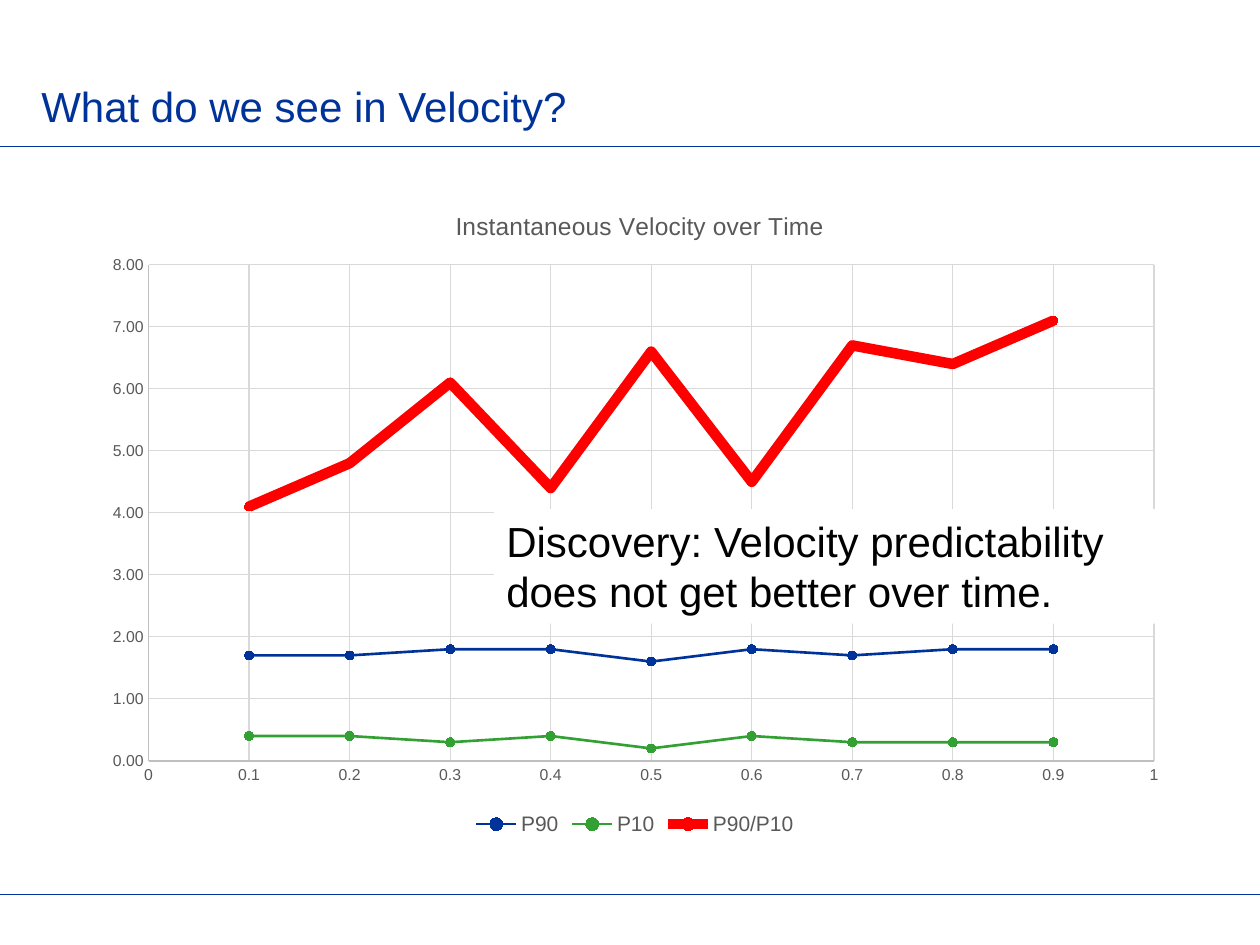
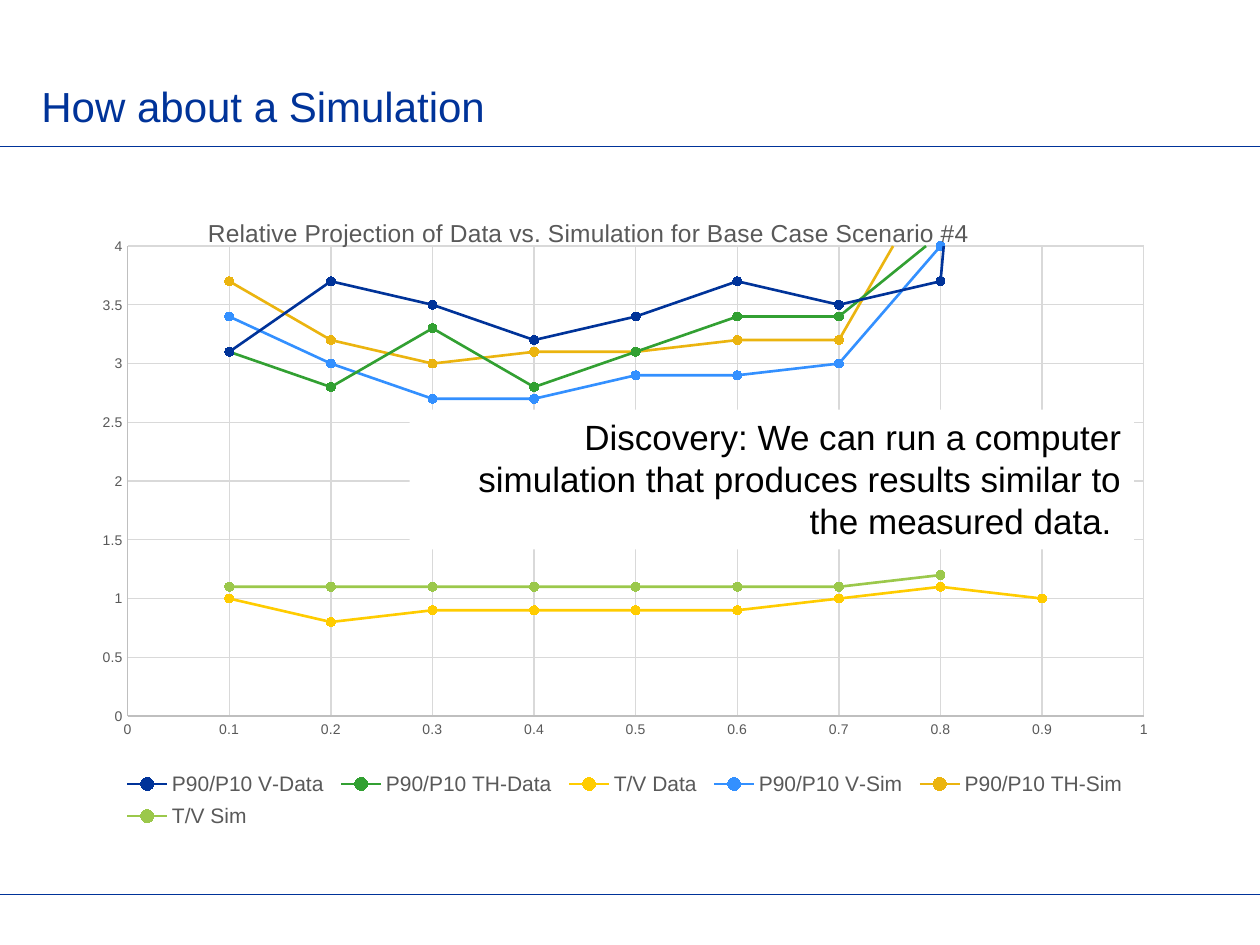
from lxml import etree
from pptx import Presentation
from pptx.chart.data import XyChartData
from pptx.dml.color import RGBColor
from pptx.enum import chart as ch, shapes, text as tx
from pptx.oxml.ns import qn
from pptx.util import Inches, Pt

HUES = {
    "navy": "003399", "green": "32A032", "gold": "FFCC00", "blue": "3390FF",
    "amber": "EBB40F", "lime": "9BC84B", "red": "FF0000", "black": "000000",
    "white": "FFFFFF", "gray": "595959", "axis": "BFBFBF", "grid": "D9D9D9",
}
RGB = {name: RGBColor.from_string(code) for name, code in HUES.items()}
FONT = "Arial"
TIMES = [n / 10 for n in range(1, 10)]

SLIDES = [
    {
        "title": "What do we see in Velocity?",
        "box": (0.75, 1.42, 8.58, 5.25),
        "head": "Instantaneous Velocity over Time",
        "head_at": (0.33, 0.04),
        "plot": (0.05, 0.13, 0.93, 0.75),
        "key": None,
        "top": 8, "step": 1, "form": "0.00", "size": 9,
        "rows": [
            ("P90", "navy", 1.5, [1.7, 1.7, 1.8, 1.8, 1.6, 1.8, 1.7, 1.8, 1.8]),
            ("P10", "green", 1.5, [0.4, 0.4, 0.3, 0.4, 0.2, 0.4, 0.3, 0.3, 0.3]),
            ("P90/P10", "red", 6, [4.1, 4.8, 6.1, 4.4, 6.6, 4.5, 6.7, 6.4, 7.1]),
        ],
        "note": "Discovery: Velocity predictability does not get better over time.",
        "note_at": (3.92, 4.04, 5.33, 0.91),
        "note_size": 24, "align": tx.PP_ALIGN.LEFT,
    },
    {
        "title": "How about a Simulation",
        "box": (0.67, 1.42, 8.58, 5.33),
        "head": "Relative Projection of Data vs. Simulation for Base Case Scenario #4",
        "head_at": (0.11, 0.05),
        "plot": (0.04, 0.1, 0.94, 0.7),
        "key": (0.03, 0.87, 0.94, 0.11),
        "top": 4, "step": 0.5, "form": "General", "size": 8,
        "rows": [
            ("P90/P10 V-Data", "navy", 1.5, [3.1, 3.7, 3.5, 3.2, 3.4, 3.7, 3.5, 3.7, 13.2]),
            ("P90/P10 TH-Data", "green", 1.5, [3.1, 2.8, 3.3, 2.8, 3.1, 3.4, 3.4, 4.1, 13.1]),
            ("T/V Data", "gold", 1.5, [1, 0.8, 0.9, 0.9, 0.9, 0.9, 1, 1.1, 1]),
            ("P90/P10 V-Sim", "blue", 1.5, [3.4, 3, 2.7, 2.7, 2.9, 2.9, 3, 4]),
            ("P90/P10 TH-Sim", "amber", 1.5, [3.7, 3.2, 3, 3.1, 3.1, 3.2, 3.2, 4.7]),
            ("T/V Sim", "lime", 1.5, [1.1, 1.1, 1.1, 1.1, 1.1, 1.1, 1.1, 1.2]),
        ],
        "note": "Discovery: We can run a computer\vsimulation that produces results "
                "similar to the measured data. ",
        "note_at": (3.25, 3.25, 5.75, 1.11),
        "note_size": 20, "align": tx.PP_ALIGN.RIGHT,
    },
]


def write(frame, words, size=24, hue="black", align=None, anchor=None):
    frame.word_wrap = True
    if anchor is not None:
        frame.vertical_anchor = anchor
    para = frame.paragraphs[0]
    para.text = words
    para.alignment = align
    for run in para.runs:
        run.font.name, run.font.size, run.font.bold = FONT, Pt(size), False
        run.font.color.rgb = RGB[hue]


def place(part, index, spot, inner=False):
    """Give a chart part a manual layout, in fractions of the chart."""
    for old in part.findall(qn("c:layout")):
        part.remove(old)
    layout = etree.Element(qn("c:layout"))
    manual = etree.SubElement(layout, qn("c:manualLayout"))
    items = [("layoutTarget", "inner")] if inner else []
    items += [("xMode", "edge"), ("yMode", "edge"), *zip("xywh", spot)]
    for tag, value in items:
        etree.SubElement(manual, qn("c:" + tag)).set("val", str(value))
    part.insert(index, layout)


deck = Presentation()
deck.slide_width, deck.slide_height = Inches(10), Inches(7.5)

for page in SLIDES:
    slide = deck.slides.add_slide(deck.slide_layouts[6])

    # Rules and title
    for y in (1.16, 7.1):
        rule = slide.shapes.add_connector(
            shapes.MSO_CONNECTOR.STRAIGHT, 0, Inches(y), Inches(10), Inches(y))
        rule.line.color.rgb, rule.line.width = RGB["navy"], Pt(0.5)
        etree.SubElement(rule._element.spPr, qn("a:effectLst"))
    title = slide.shapes.add_textbox(*map(Inches, (0.23, 0.15, 8.28, 0.94)))
    write(title.text_frame, page["title"], hue="navy", anchor=tx.MSO_ANCHOR.BOTTOM)

    # Chart
    data = XyChartData()
    for name, hue, width, vals in page["rows"]:
        row = data.add_series(name)
        for x, y in zip(TIMES, vals):
            row.add_data_point(x, y)
    chart = slide.shapes.add_chart(
        ch.XL_CHART_TYPE.XY_SCATTER_LINES, *map(Inches, page["box"]), data).chart
    chart.font.name, chart.font.size = FONT, Pt(10)
    chart.font.color.rgb = RGB["black"]
    chart.plots[0].vary_by_categories = False

    for plot, (name, hue, width, vals) in zip(chart.plots[0].series, page["rows"]):
        plot.smooth = False
        plot.format.line.color.rgb = RGB[hue]
        plot.format.line.width = Pt(width)
        dot = plot.marker
        dot.style, dot.size = ch.XL_MARKER_STYLE.CIRCLE, 5
        dot.format.fill.solid()
        dot.format.fill.fore_color.rgb = RGB[hue]
        dot.format.line.color.rgb = RGB[hue]

    for axis, top, step, form in (
            (chart.category_axis, 1, 0.1, "General"),
            (chart.value_axis, page["top"], page["step"], page["form"])):
        axis.minimum_scale, axis.maximum_scale, axis.major_unit = 0, top, step
        axis.major_tick_mark = axis.minor_tick_mark = ch.XL_TICK_MARK.NONE
        axis.has_major_gridlines = True
        for line, hue in ((axis.format.line, "axis"),
                          (axis.major_gridlines.format.line, "grid")):
            line.color.rgb, line.width = RGB[hue], Pt(0.75)
        labels = axis.tick_labels
        labels.number_format, labels.number_format_is_linked = form, False
        labels.font.name, labels.font.size = FONT, Pt(page["size"])
        labels.font.color.rgb = RGB["gray"]

    chart.has_title = True
    head = chart.chart_title
    write(head.text_frame, page["head"], size=14, hue="gray")
    place(head._element, 1, page["head_at"])
    place(chart._chartSpace.chart.plotArea, 0, page["plot"], inner=True)

    chart.has_legend = True
    key = chart.legend
    key.position, key.include_in_layout = ch.XL_LEGEND_POSITION.BOTTOM, False
    key.font.name, key.font.size = FONT, Pt(12)
    key.font.color.rgb = RGB["gray"]
    if page["key"]:
        place(key._element, 1, page["key"])

    # Finding
    note = slide.shapes.add_shape(
        shapes.MSO_SHAPE.RECTANGLE, *map(Inches, page["note_at"]))
    note.shadow.inherit = False
    note.fill.solid()
    note.fill.fore_color.rgb = RGB["white"]
    note.line.fill.background()
    write(note.text_frame, page["note"], size=page["note_size"],
          align=page["align"], anchor=tx.MSO_ANCHOR.TOP)

deck.save("out.pptx")
